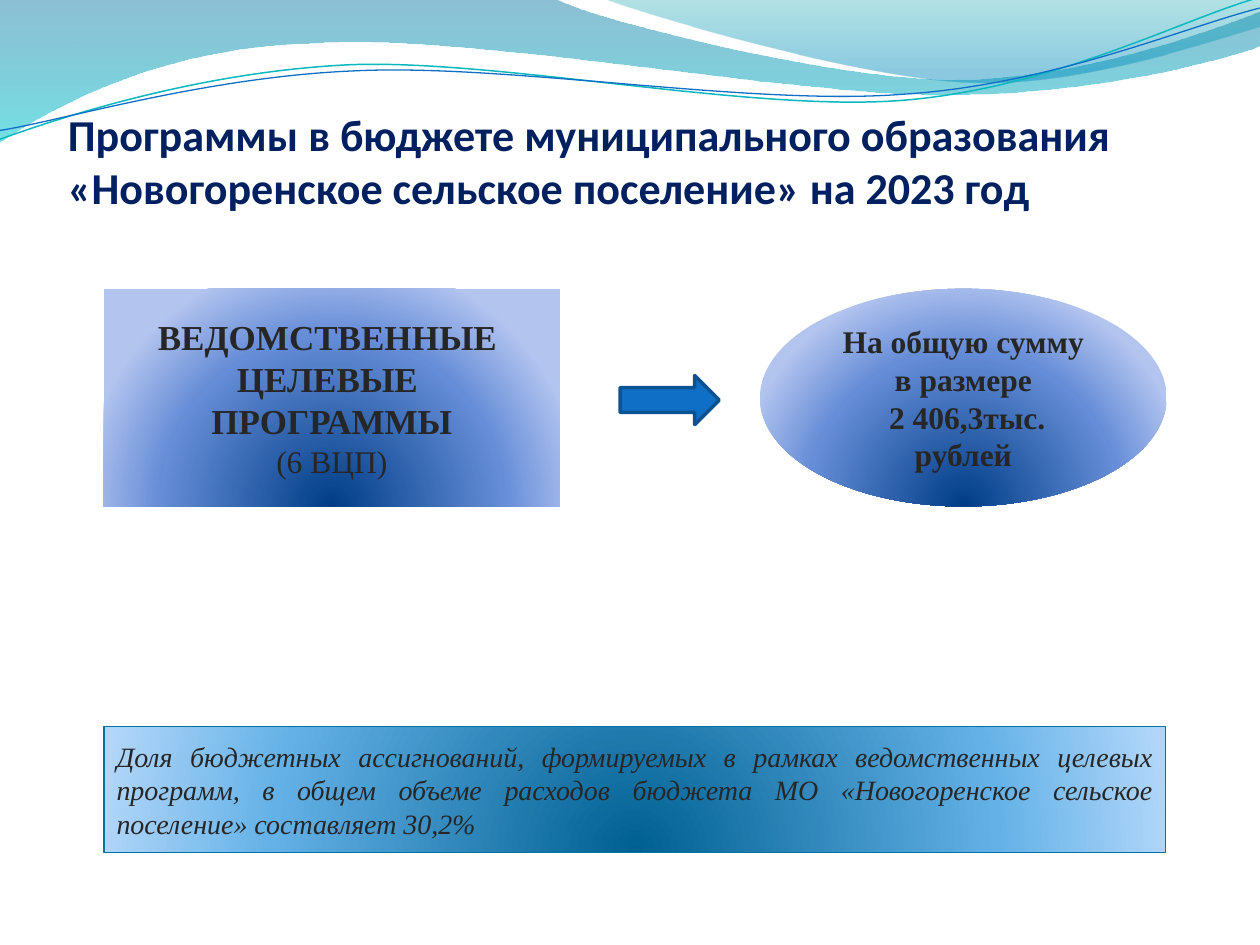
import pptx
import pptx.util
import pptx.dml.color
import pptx.enum.shapes
import pptx.enum.text
import pptx.oxml
import pptx.oxml.ns
from pptx.util import Cm

SHAPE = pptx.enum.shapes.MSO_SHAPE
ALIGN = pptx.enum.text.PP_ALIGN
ANCHOR = pptx.enum.text.MSO_ANCHOR

# Content: box places are left, top, width, height in cm
TITLE = ("Программы в бюджете муниципального образования "
         "«Новогоренское сельское поселение» на 2023 год")
TITLE_BOX = (1.37, 1.12, 22.86, 3.18)
ARROW_BOX = (12.5, 7.57, 2, 0.99)
PANELS = [
    dict(kind=SHAPE.RECTANGLE, box=(2.09, 5.82, 9.2, 4.39), fill="blue", align=ALIGN.CENTER,
         lines=[("ВЕДОМСТВЕННЫЕ ", "head"), ("ЦЕЛЕВЫЕ ", "head"),
                ("ПРОГРАММЫ", "head"), ("(6 ВЦП)", "count")]),
    dict(kind=SHAPE.OVAL, box=(15.32, 5.82, 8.2, 4.39), fill="blue", align=ALIGN.CENTER,
         lines=[("На общую сумму в размере", "sum"), (" 2 406,3тыс. рублей", "sum")]),
    dict(kind=SHAPE.RECTANGLE, box=(2.1, 14.65, 21.4, 2.54), fill="sky", align=ALIGN.JUSTIFY,
         line="0074A1",
         lines=[("Доля бюджетных ассигнований, формируемых в рамках ведомственных целевых "
                 "программ, в общем объеме расходов бюджета МО «Новогоренское сельское "
                 "поселение» составляет 30,2%", "note")]),
]

# Theme: sizes are points; gradient stops are position, colour, opacity in percent
THEME = dict(
    title=dict(name="Calibri", size=25.2, color="002060", bold=True),
    text=dict(name="Times New Roman", color="262626"),
    head=dict(size=20, bold=True),
    count=dict(size=18),
    sum=dict(size=18, bold=True),
    note=dict(size=16, italic=True),
    arrow=("0F6FC6", "0B5292", 2),
    blue=[(0, "003D87", 100), (68, "668DD7", 100), (100, "B3C4EF", 100)],
    sky=[(0, "006091", 100), (68, "64B1E7", 100), (100, "B1D6F9", 100)],
    band=[(0, "0074A1", 45), (100, "00C6CF", 55)],
    crest=[(0, "00A1A9", 30), (80, "008BBF", 45)],
)

# Header waves in inches: a start point, then lines (one point) or Bezier curves (three)
WAVES = [
    dict(fill="band", start=(0, 0), segments=[
        [(4.4, -0.01)],
        [(4.76, 0.17), (6.64, 0.63), (7.58, 0.63)],
        [(8.53, 0.63), (9.58, 0.26), (10, 0.09)],
        [(10.01, 0.36)],
        [(9.83, 0.44), (8.7, 0.76), (7.46, 0.75)],
        [(6.22, 0.75), (3.82, 0.28), (2.57, 0.34)],
        [(1.29, 0.36), (0.46, 0.83), (-0.01, 1.13)],
        [(0, 0)]]),
    dict(fill="crest", start=(4.79, -0.01), segments=[
        [(5.09, 0.11), (6.82, 0.62), (7.69, 0.65)],
        [(8.56, 0.69), (9.61, 0.32), (10, 0.21)],
        [(10, 0)],
        [(4.79, -0.01)]]),
    dict(line=("0AB8BF", 0.85), start=(-0.02, 0.87), segments=[
        [(0.47, 0.72), (1.58, 0.41), (2.78, 0.41)],
        [(3.96, 0.42), (5.91, 0.93), (7.12, 0.9)],
        [(8.32, 0.87), (9.4, 0.36), (10, 0.22)]]),
    dict(line=("0F6FC6", 0.75), start=(-0.02, 0.8), segments=[
        [(0.46, 0.75), (1.64, 0.45), (2.83, 0.46)],
        [(4.04, 0.46), (5.96, 0.89), (7.16, 0.85)],
        [(8.35, 0.83), (9.42, 0.42), (10.02, 0.3)]]),
]
WAVE_TILT = 357.3
DOWNWARD = '<a:lin ang="5400000" scaled="0"/>'
RADIAL = ('<a:path path="circle"><a:fillToRect l="50000" t="130000" '
          'r="50000" b="-30000"/></a:path>')


def rgb(value):
    return pptx.dml.color.RGBColor.from_string(value)


def cm(box):
    return [Cm(v) for v in box]


def set_line(sp, color, width):
    sp.line.color.rgb = rgb(color)
    sp.line.width = pptx.util.Pt(width)


def set_gradient(sp, stops, direction):
    stop_xml = ""
    for pos, color, opacity in stops:
        alpha = f'<a:alpha val="{opacity * 1000}"/>' if opacity < 100 else ""
        stop_xml += f'<a:gs pos="{pos * 1000}"><a:srgbClr val="{color}">{alpha}</a:srgbClr></a:gs>'
    grad = pptx.oxml.parse_xml(
        f'<a:gradFill {pptx.oxml.ns.nsdecls("a")} rotWithShape="1">'
        f'<a:gsLst>{stop_xml}</a:gsLst>{direction}</a:gradFill>')
    sp.fill.background()
    props = sp._element.spPr
    props.replace(props.find(pptx.oxml.ns.qn("a:noFill")), grad)


def set_font(p, name, size, color, bold=False, italic=False):
    p.font.name, p.font.size = name, pptx.util.Pt(size)
    p.font.bold, p.font.italic = bold, italic
    p.font.color.rgb = rgb(color)


def bend_segments(sp, segments):
    """Merge each run of three straight steps into one Bezier curve."""
    qn = pptx.oxml.ns.qn
    steps = iter(list(sp._element.iter(qn("a:lnTo"))))
    for segment in segments:
        group = [next(steps) for _ in segment]
        if len(group) == 3:
            curve = group[0].makeelement(qn("a:cubicBezTo"), {})
            group[0].addprevious(curve)
            for step in group:
                curve.append(step[0])
                step.getparent().remove(step)


def add_wave(s, wave):
    points = [wave["start"]] + [pt for segment in wave["segments"] for pt in segment]
    points = [(Cm(2.54 * x), Cm(2.54 * y)) for x, y in points]
    builder = s.shapes.build_freeform(*points[0])
    builder.add_line_segments(points[1:], close="fill" in wave)
    sp = builder.convert_to_shape()
    bend_segments(sp, wave["segments"])
    sp.shadow.inherit = False
    if "fill" in wave:
        set_gradient(sp, THEME[wave["fill"]], DOWNWARD)
        sp.line.fill.background()
    else:
        sp.fill.background()
        set_line(sp, *wave["line"])
        sp.rotation = WAVE_TILT


def add_panel(s, panel):
    sp = s.shapes.add_shape(panel["kind"], *cm(panel["box"]))
    sp.shadow.inherit = False
    set_gradient(sp, THEME[panel["fill"]], RADIAL)
    if "line" in panel:
        set_line(sp, panel["line"], 0.75)
    else:
        sp.line.fill.background()
    tf = sp.text_frame
    tf.word_wrap = True
    tf.vertical_anchor = ANCHOR.MIDDLE
    for i, (text, style) in enumerate(panel["lines"]):
        p = tf.add_paragraph() if i else tf.paragraphs[0]
        p.text, p.alignment = text, panel["align"]
        set_font(p, **THEME["text"], **THEME[style])


def add_title(s):
    sp = s.shapes.title
    sp.left, sp.top, sp.width, sp.height = cm(TITLE_BOX)
    tf = sp.text_frame
    tf.text = TITLE
    tf.word_wrap = True
    tf.auto_size = pptx.enum.text.MSO_AUTO_SIZE.NONE
    tf.vertical_anchor = ANCHOR.BOTTOM
    tf.margin_left = tf.margin_right = tf.margin_bottom = 0
    tf.paragraphs[0].alignment = ALIGN.LEFT
    set_font(tf.paragraphs[0], **THEME["title"])
    s.shapes._spTree.append(sp._element)  # in front of the waves


def add_arrow(s):
    sp = s.shapes.add_shape(SHAPE.RIGHT_ARROW, *cm(ARROW_BOX))
    fill, line, width = THEME["arrow"]
    sp.shadow.inherit = False
    sp.fill.solid()
    sp.fill.fore_color.rgb = rgb(fill)
    set_line(sp, line, width)


def main():
    prs = pptx.Presentation()
    prs.slide_width, prs.slide_height = Cm(25.4), Cm(19.05)
    s = prs.slides.add_slide(prs.slide_layouts[5])
    for wave in WAVES:
        add_wave(s, wave)
    add_title(s)
    program, total, share = PANELS
    add_panel(s, program)
    add_arrow(s)
    add_panel(s, total)
    add_panel(s, share)
    prs.save("out.pptx")


if __name__ == "__main__":
    main()
